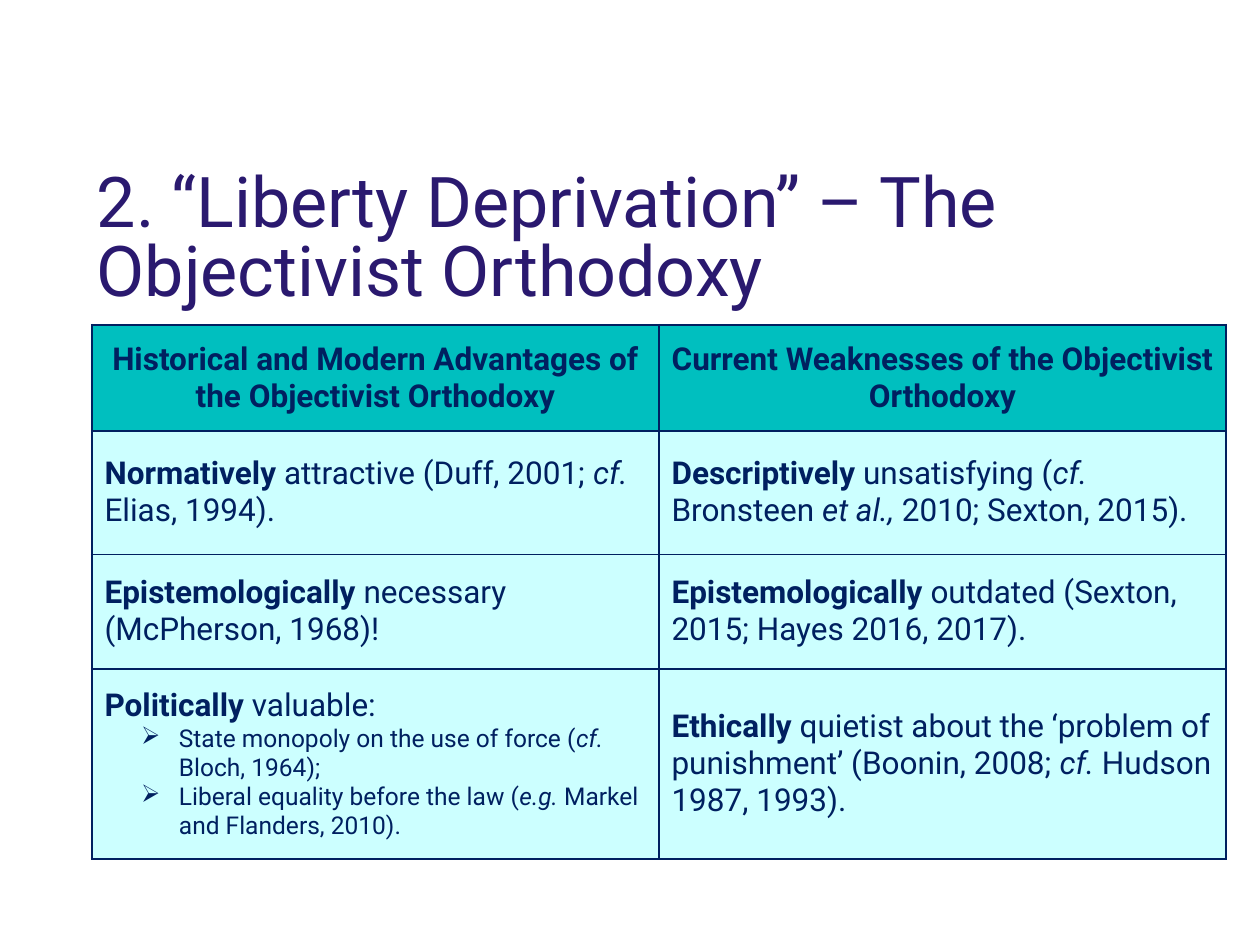
from dataclasses import dataclass

from lxml import etree
from pptx import Presentation
from pptx import util as u
from pptx.dml import color
from pptx.enum import text
from pptx.oxml import ns


@dataclass(frozen=True)
class Theme:
    """Colours, font and sizes of the slide."""
    font: str = "Roboto"
    title: str = "2A196F"
    ink: str = "002060"
    header: str = "00BFBF"
    body: str = "CCFFFF"
    title_size: int = 40
    cell_size: int = 18
    bullet_size: int = 14
    thick: float = 1.5
    thin: float = 1


THEME = Theme()
TITLE = "2. “Liberty Deprivation” – The Objectivist Orthodoxy"
COLUMN_WIDTHS = (4.5, 4.5)
ROW_HEIGHTS = (0.84, 0.98, 0.91, 1.51)
BULLET = "➢"
ROWS = [
    [
        [[("Historical and Modern Advantages of the Objectivist Orthodoxy", "b")]],
        [[("Current Weaknesses of the Objectivist Orthodoxy", "b")]],
    ],
    [
        [[("Normatively", "b"), (" attractive (Duff, 2001; ", ""), ("cf.", "i"),
          (" Elias, 1994).", "")]],
        [[("Descriptively", "b"), (" unsatisfying (", ""), ("cf. ", "i"),
          ("Bronsteen ", ""), ("et al., ", "i"), ("2010; Sexton, 2015).", "")]],
    ],
    [
        [[("Epistemologically ", "b"), ("necessary (McPherson, 1968)!", "")]],
        [[("Epistemologically", "b"), (" outdated (Sexton, 2015; Hayes 2016, 2017).", "")]],
    ],
    [
        [
            [("Politically ", "b"), ("valuable:", "")],
            [("State monopoly on the use of force (", ""), ("cf.", "i"),
             (" Bloch, 1964);", "")],
            [("Liberal equality before the law (", ""), ("e.g. ", "i"),
             ("Markel and Flanders, 2010).", "")],
        ],
        [[("Ethically ", "b"), ("quietist about the ‘problem of punishment’ (Boonin, 2008; ", ""),
          ("cf.", "i"), (" Hudson 1987, 1993).", "")]],
    ],
]


def add_run(paragraph, words, size, ink, style=""):
    """Add one run; style is b for bold, i for italic."""
    run = paragraph.add_run()
    run.text = words
    run.font.name = THEME.font
    run.font.size = u.Pt(size)
    run.font.color.rgb = color.RGBColor.from_string(ink)
    run.font.bold = style == "b"
    run.font.italic = style == "i"


def add_bullet(paragraph):
    """Give a paragraph a hanging arrow bullet."""
    properties = paragraph._p.get_or_add_pPr()
    properties.set("marL", str(u.Inches(0.59)))
    properties.set("indent", str(u.Inches(-0.3)))
    etree.SubElement(properties, ns.qn("a:buChar"), char=BULLET)


def add_border(cell, side, width):
    """Draw one side (L, R, T or B) of a cell."""
    properties = cell._tc.get_or_add_tcPr()
    line = etree.SubElement(properties, ns.qn(f"a:ln{side}"), w=str(u.Pt(width)))
    fill = etree.SubElement(line, ns.qn("a:solidFill"))
    etree.SubElement(fill, ns.qn("a:srgbClr"), val=THEME.ink)


def style_cell(cell, row, column):
    """Set borders, fill and anchor from the cell's place in the table."""
    last_row, last_column = len(ROW_HEIGHTS) - 1, len(COLUMN_WIDTHS) - 1
    thick_sides = {
        "L": column == 0,
        "R": column == last_column,
        "T": row <= 1,
        "B": row in (0, last_row),
    }
    for side, is_thick in thick_sides.items():
        add_border(cell, side, THEME.thick if is_thick else THEME.thin)
    cell.fill.solid()
    fill = THEME.header if row == 0 else THEME.body
    cell.fill.fore_color.rgb = color.RGBColor.from_string(fill)
    cell.vertical_anchor = text.MSO_ANCHOR.MIDDLE


def fill_cell(cell, paragraphs, centred):
    """Write a cell; every paragraph after the first is a bullet."""
    frame = cell.text_frame
    for index, runs in enumerate(paragraphs):
        paragraph = frame.add_paragraph() if index else frame.paragraphs[0]
        if index:
            add_bullet(paragraph)
        paragraph.alignment = text.PP_ALIGN.CENTER if centred else text.PP_ALIGN.LEFT
        size = THEME.bullet_size if index else THEME.cell_size
        for words, style in runs:
            add_run(paragraph, words, size, THEME.ink, style)


def add_title(slide):
    """Add the slide title."""
    shape = slide.shapes.add_textbox(u.Inches(0.67), u.Inches(1.5), u.Inches(9), u.Inches(0.83))
    frame = shape.text_frame
    frame.word_wrap = True
    frame.vertical_anchor = text.MSO_ANCHOR.MIDDLE
    paragraph = frame.paragraphs[0]
    paragraph.line_spacing = 0.83
    add_run(paragraph, TITLE, THEME.title_size, THEME.title)


def add_comparison_table(slide):
    """Add the table of advantages and weaknesses."""
    table = slide.shapes.add_table(
        len(ROW_HEIGHTS), len(COLUMN_WIDTHS), u.Inches(0.73), u.Inches(2.58),
        u.Inches(sum(COLUMN_WIDTHS)), u.Inches(sum(ROW_HEIGHTS))).table
    table.first_row = table.horz_banding = False
    for column, width in zip(table.columns, COLUMN_WIDTHS):
        column.width = u.Inches(width)
    for row_index, (height, row) in enumerate(zip(ROW_HEIGHTS, ROWS)):
        table.rows[row_index].height = u.Inches(height)
        for column_index, paragraphs in enumerate(row):
            cell = table.cell(row_index, column_index)
            style_cell(cell, row_index, column_index)
            fill_cell(cell, paragraphs, centred=row_index == 0)


def main():
    """Build and save the slide."""
    presentation = Presentation()
    presentation.slide_width = u.Inches(10)
    presentation.slide_height = u.Inches(7.5)
    slide = presentation.slides.add_slide(presentation.slide_layouts[6])
    add_title(slide)
    add_comparison_table(slide)
    presentation.save("out.pptx")


if __name__ == "__main__":
    main()
